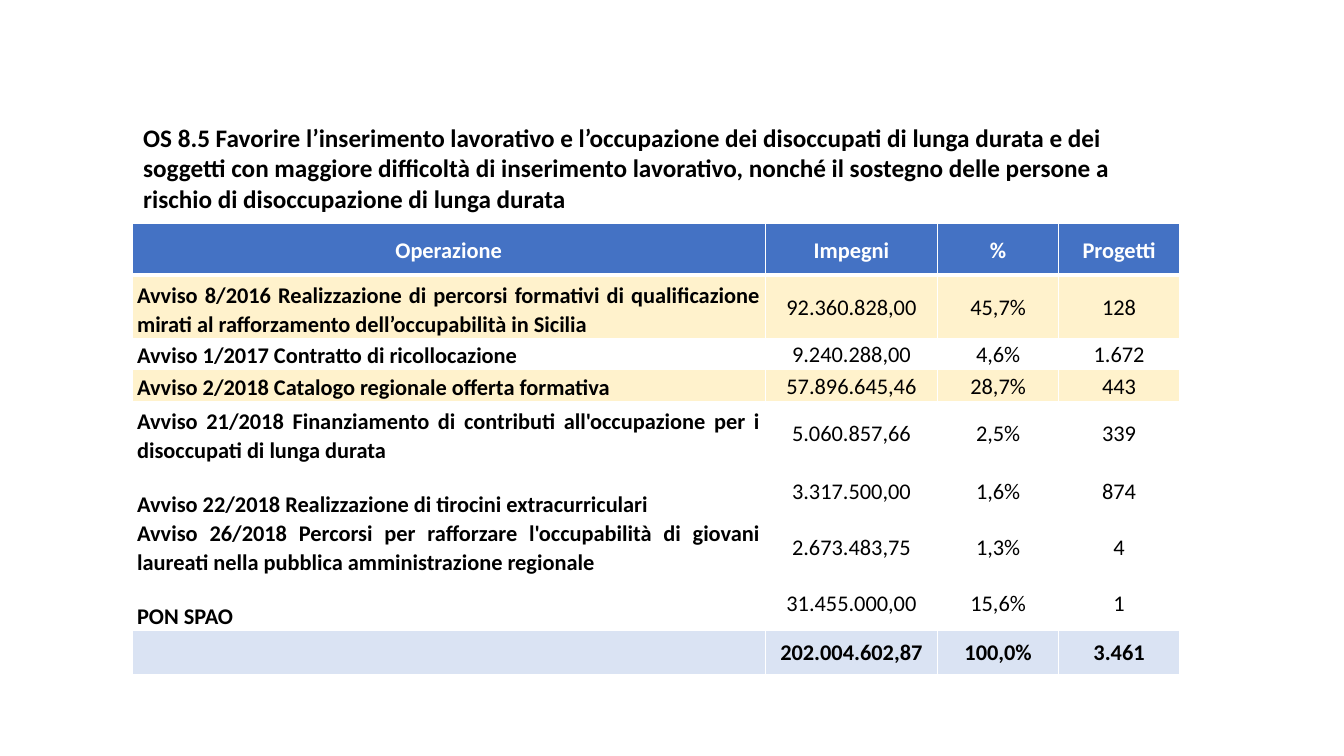
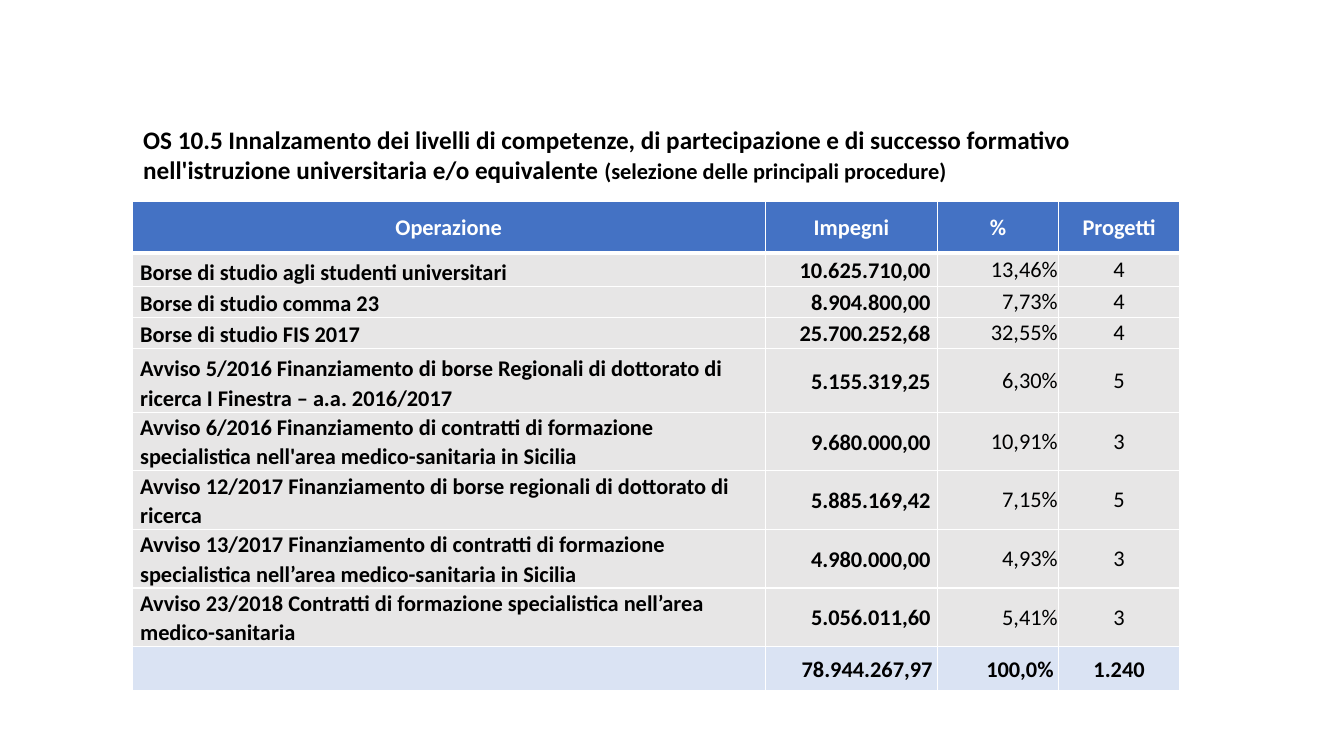
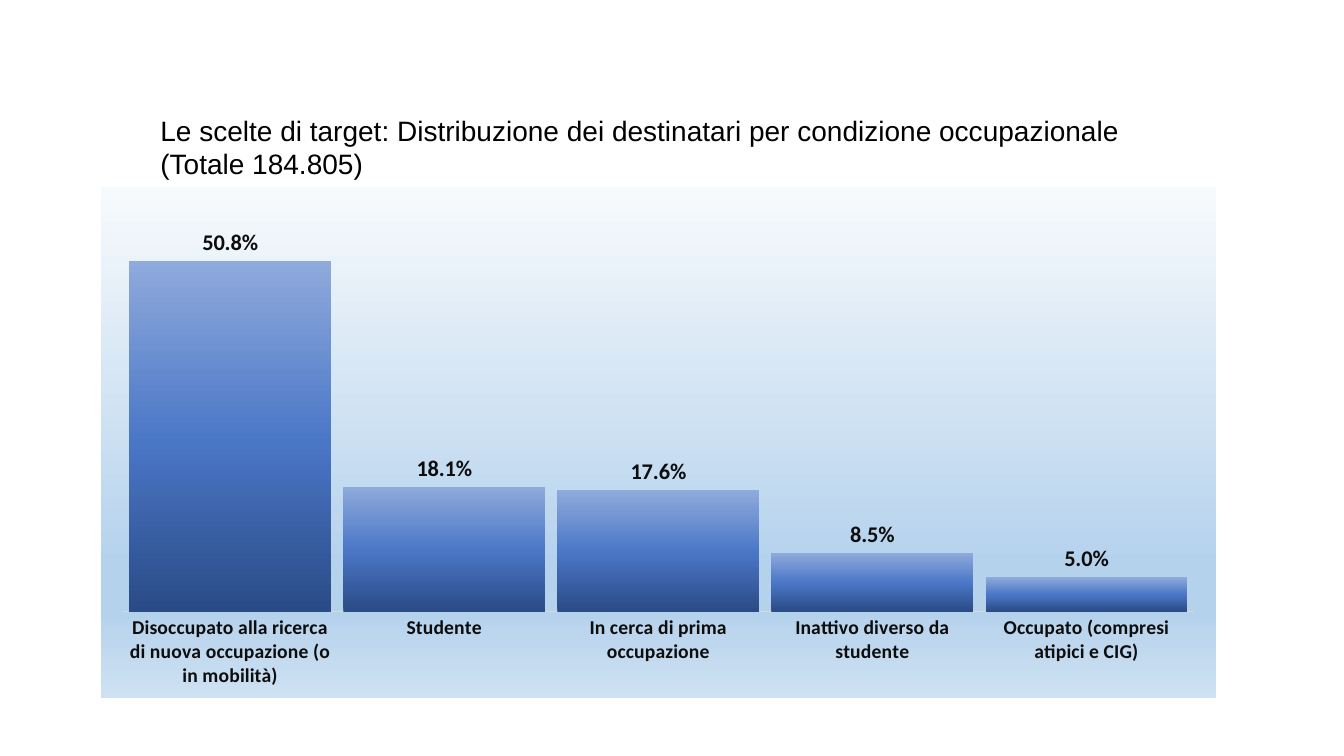
from collections import namedtuple

import pptx
import pptx.chart.data
import pptx.dml.color
import pptx.enum.chart
import pptx.enum.text
import pptx.oxml
import pptx.oxml.ns
import pptx.util

Inches = pptx.util.Inches
Pt = pptx.util.Pt
RGBColor = pptx.dml.color.RGBColor
Align = pptx.enum.text.PP_ALIGN
Anchor = pptx.enum.text.MSO_ANCHOR

BLACK = RGBColor(0x00, 0x00, 0x00)
WHITE = RGBColor(0xFF, 0xFF, 0xFF)
INK = RGBColor(0x0D, 0x0D, 0x0D)
BLUE = RGBColor(0x44, 0x72, 0xC4)
PALE = RGBColor(0xDA, 0xE3, 0xF3)
CREAM = RGBColor(0xFF, 0xF2, 0xCC)
GREY = RGBColor(0xE7, 0xE6, 0xE6)
RULE = RGBColor(0xD9, 0xD9, 0xD9)
SKY = [(0, RGBColor(0xF7, 0xFA, 0xFD)), (74, RGBColor(0xB5, 0xD2, 0xEC)),
       (83, RGBColor(0xB5, 0xD2, 0xEC)), (100, RGBColor(0xCE, 0xE1, 0xF2))]
BAR = [(0, RGBColor(0x2A, 0x4B, 0x86)), (48, RGBColor(0x4A, 0x76, 0xC6)),
       (100, RGBColor(0x8F, 0xAA, 0xDC))]

FONT = "Calibri"
LEFT = 1.31
WIDTHS = [6.28, 1.71, 1.2, 1.2]
HEADS = ["Operazione", "Impegni", "%", "Progetti"]

Look = namedtuple("Look", "align anchor left right bold space", defaults=[1.07])
HEAD = Look(Align.CENTER, Anchor.MIDDLE, 0.05, 0.05, True)
NUMBER = HEAD._replace(bold=False)
TASK = Look(Align.JUSTIFY, Anchor.BOTTOM, 0.05, 0.05, True)
SUM = HEAD._replace(align=Align.RIGHT)
GRANT = Look(Align.LEFT, Anchor.BOTTOM, 0.08, 0.07, True)
MONEY = Look(Align.RIGHT, Anchor.MIDDLE, 0.08, 0.07, True)
SHARE = Look(Align.RIGHT, Anchor.MIDDLE, 0.01, 0.01, False, 1)
COUNT = SHARE._replace(align=Align.CENTER)

JOBS = [
    ("Avviso 8/2016 Realizzazione di percorsi formativi di qualificazione mirati al "
     "rafforzamento dell’occupabilità in Sicilia", "92.360.828,00", "45,7%", "128"),
    ("Avviso 1/2017 Contratto di ricollocazione", "9.240.288,00", "4,6%", "1.672"),
    ("Avviso 2/2018 Catalogo regionale offerta formativa", "57.896.645,46", "28,7%", "443"),
    ("Avviso 21/2018 Finanziamento di contributi all'occupazione per i disoccupati "
     "di lunga durata", "5.060.857,66", "2,5%", "339"),
    ("Avviso 22/2018 Realizzazione di tirocini extracurriculari",
     "3.317.500,00", "1,6%", "874"),
    ("Avviso 26/2018 Percorsi per rafforzare l'occupabilità di giovani laureati nella "
     "pubblica amministrazione regionale", "2.673.483,75", "1,3%", "4"),
    ("PON SPAO", "31.455.000,00", "15,6%", "1"),
    ("", "202.004.602,87", "100,0%", "3.461"),
]
GRANTS = [
    ("Borse di studio agli studenti universitari", "10.625.710,00", "13,46%", "4"),
    ("Borse di studio comma 23", "8.904.800,00", "7,73%", "4"),
    ("Borse di studio FIS 2017", "25.700.252,68", "32,55%", "4"),
    ("Avviso 5/2016 Finanziamento di borse Regionali di dottorato di ricerca "
     "I Finestra – a.a. 2016/2017", "5.155.319,25", "6,30%", "5"),
    ("Avviso 6/2016 Finanziamento di contratti di formazione specialistica nell'area "
     "medico-sanitaria in Sicilia", "9.680.000,00", "10,91%", "3"),
    ("Avviso 12/2017 Finanziamento di borse regionali di dottorato di ricerca",
     "5.885.169,42", "7,15%", "5"),
    ("Avviso 13/2017 Finanziamento di contratti di formazione specialistica nell’area "
     "medico-sanitaria in Sicilia", "4.980.000,00", "4,93%", "3"),
    ("Avviso 23/2018 Contratti di formazione specialistica nell’area medico-sanitaria",
     "5.056.011,60", "5,41%", "3"),
    ("", "78.944.267,97", "100,0%", "1.240"),
]
TARGETS = [
    ("Disoccupato alla ricerca di nuova occupazione (o in mobilità)", 0.508),
    ("Studente", 0.181),
    ("In cerca di prima occupazione", 0.176),
    ("Inattivo diverso da studente", 0.085),
    ("Occupato (compresi atipici e CIG)", 0.05),
]


def style(font, size, color, bold, name=FONT):
    font.name = name
    font.size = Pt(size)
    font.bold = bold
    font.color.rgb = color


def add_page(deck, box, lines, bold=True, name=FONT):
    slide = deck.slides.add_slide(deck.slide_layouts[5])
    title = slide.shapes.title
    title.left, title.top, title.width, title.height = map(Inches, box)
    frame = title.text_frame
    frame.auto_size = pptx.enum.text.MSO_AUTO_SIZE.NONE
    frame.word_wrap = True
    frame.vertical_anchor = Anchor.MIDDLE
    for i, line in enumerate(lines):
        para = frame.add_paragraph() if i else frame.paragraphs[0]
        para.alignment = Align.LEFT
        for text, size in line:
            run = para.add_run()
            run.text = text
            style(run.font, size, BLACK, bold, name)
    return slide


def add_edges(cell, top, bottom):
    props = cell._tc.get_or_add_tcPr()
    for i, (side, width) in enumerate([("L", 1), ("R", 1), ("T", top), ("B", bottom)]):
        props.insert(i, pptx.oxml.parse_xml(
            f'<a:ln{side} {pptx.oxml.ns.nsdecls("a")} w="{Pt(width)}"><a:solidFill>'
            f'<a:srgbClr val="{WHITE}"/></a:solidFill></a:ln{side}>'))


def fill_cell(cell, text, look, fill, color):
    cell.fill.solid()
    cell.fill.fore_color.rgb = fill
    cell.vertical_anchor = look.anchor
    cell.margin_left, cell.margin_right = Inches(look.left), Inches(look.right)
    cell.margin_top = cell.margin_bottom = 0
    if text:
        para = cell.text_frame.paragraphs[0]
        para.alignment = look.align
        para.line_spacing = look.space
        para.space_after = Pt(8)
        run = para.add_run()
        run.text = text
        style(run.font, 16, color, look.bold)


def add_grid(slide, top, heights, rows, looks, sums, fills):
    count = len(rows) + 1
    table = slide.shapes.add_table(
        count, len(WIDTHS), Inches(LEFT), Inches(top),
        Inches(sum(WIDTHS)), Inches(sum(heights))).table
    table.horz_banding = False
    for column, width in zip(table.columns, WIDTHS):
        column.width = Inches(width)
    for r, texts in enumerate([HEADS] + rows):
        table.rows[r].height = Inches(heights[r])
        if r == 0:
            kinds, fill, color = [HEAD] * 4, BLUE, WHITE
        elif r == count - 1:
            kinds, fill, color = sums, PALE, BLACK
        else:
            kinds, fill, color = looks, fills[r - 1], BLACK
        for c, (text, look) in enumerate(zip(texts, kinds)):
            cell = table.cell(r, c)
            fill_cell(cell, text, look, fill, color)
            add_edges(cell, 3 if r == 1 else 1, 3 if r == 0 else 1)


def make_blend(stops, angle):
    marks = "".join(f'<a:gs pos="{at * 1000}"><a:srgbClr val="{color}"/></a:gs>'
                    for at, color in stops)
    return pptx.oxml.parse_xml(
        f'<a:gradFill {pptx.oxml.ns.nsdecls("a")} rotWithShape="1"><a:gsLst>{marks}</a:gsLst>'
        f'<a:lin ang="{angle * 60000}" scaled="0"/></a:gradFill>')


def paint_back(chart):
    props = pptx.oxml.parse_xml(
        f'<c:spPr {pptx.oxml.ns.nsdecls("c", "a")}><a:ln><a:noFill/></a:ln></c:spPr>')
    props.insert(0, make_blend(SKY, 90))
    chart._chartSpace.chart.addnext(props)


def place_plot(chart, x, y, w, h):
    area = chart._chartSpace.chart.plotArea
    old = area.find(pptx.oxml.ns.qn("c:layout"))
    if old is not None:
        area.remove(old)
    sizes = "".join(f'<c:{tag} val="{size}"/>' for tag, size in zip("xywh", (x, y, w, h)))
    area.insert(0, pptx.oxml.parse_xml(
        f'<c:layout {pptx.oxml.ns.nsdecls("c")}><c:manualLayout><c:layoutTarget val="inner"/>'
        f'<c:xMode val="edge"/><c:yMode val="edge"/>{sizes}</c:manualLayout></c:layout>'))


def add_bars(slide, box, pairs):
    data = pptx.chart.data.CategoryChartData(number_format="0.0%")
    data.categories = [name for name, share in pairs]
    data.add_series("Series 1", [share for name, share in pairs])
    kinds = pptx.enum.chart
    chart = slide.shapes.add_chart(
        kinds.XL_CHART_TYPE.COLUMN_CLUSTERED, *map(Inches, box), data).chart
    chart.has_legend = False
    chart.has_title = False
    style(chart.font, 10, INK, True)

    axis = chart.category_axis
    axis.major_tick_mark = kinds.XL_TICK_MARK.NONE
    axis.format.line.color.rgb = RULE
    axis.format.line.width = Pt(0.75)
    style(axis.tick_labels.font, 14, INK, True)

    scale = chart.value_axis
    scale.visible = False
    scale.has_major_gridlines = False
    scale.minimum_scale, scale.maximum_scale = 0, 0.6

    plot = chart.plots[0]
    plot.gap_width = 6
    plot.vary_by_categories = False
    plot.has_data_labels = True
    labels = plot.data_labels
    labels.show_value = True
    labels.number_format = "0.0%"
    labels.number_format_is_linked = False
    labels.position = kinds.XL_LABEL_POSITION.OUTSIDE_END
    style(labels.font, 16, INK, True)

    plot.series[0]._element.get_or_add_spPr().insert(0, make_blend(BAR, 270))
    paint_back(chart)
    place_plot(chart, 0.02, 0.02, 0.96, 0.81)


def main():
    deck = pptx.Presentation()
    deck.slide_width, deck.slide_height = Inches(13.33), Inches(7.5)

    slide = add_page(deck, (1.32, 1.16, 10.38, 1.01), [[
        ("OS 8.5 Favorire l’inserimento lavorativo e l’occupazione dei disoccupati di lunga "
         "durata e dei soggetti con maggiore difficoltà di inserimento lavorativo, nonché il "
         "sostegno delle persone a rischio di disoccupazione di lunga durata", 18)]])
    add_grid(slide, 2.22, [0.51, 0.63, 0.31, 0.31, 0.63, 0.53, 0.57, 0.53, 0.44], JOBS,
             [TASK] + [NUMBER] * 3, [HEAD] * 4, [CREAM, WHITE, CREAM] + [WHITE] * 4)

    slide = add_page(deck, (1.32, 1.18, 10.79, 0.71), [[
        ("OS 10.5 Innalzamento dei livelli di competenze, di partecipazione e di successo "
         "formativo nell'istruzione universitaria e/o equivalente ", 18),
        ("(selezione delle principali procedure)", 16)]])
    add_grid(slide, 2, [0.51, 0.33, 0.31, 0.31, 0.63] + [0.57] * 4 + [0.44], GRANTS,
             [GRANT, MONEY, SHARE, COUNT], [HEAD, SUM, SUM, HEAD], [GREY] * 8)

    slide = add_page(deck, (1.49, 1.07, 10.67, 0.77), [
        [("Le scelte di target: Distribuzione dei destinatari per condizione "
          "occupazionale", 20)],
        [("(Totale 184.805)", 20)]], bold=False, name="Arial")
    add_bars(slide, (1, 1.86, 11.06, 5.07), TARGETS)

    deck.save("out.pptx")


if __name__ == "__main__":
    main()
